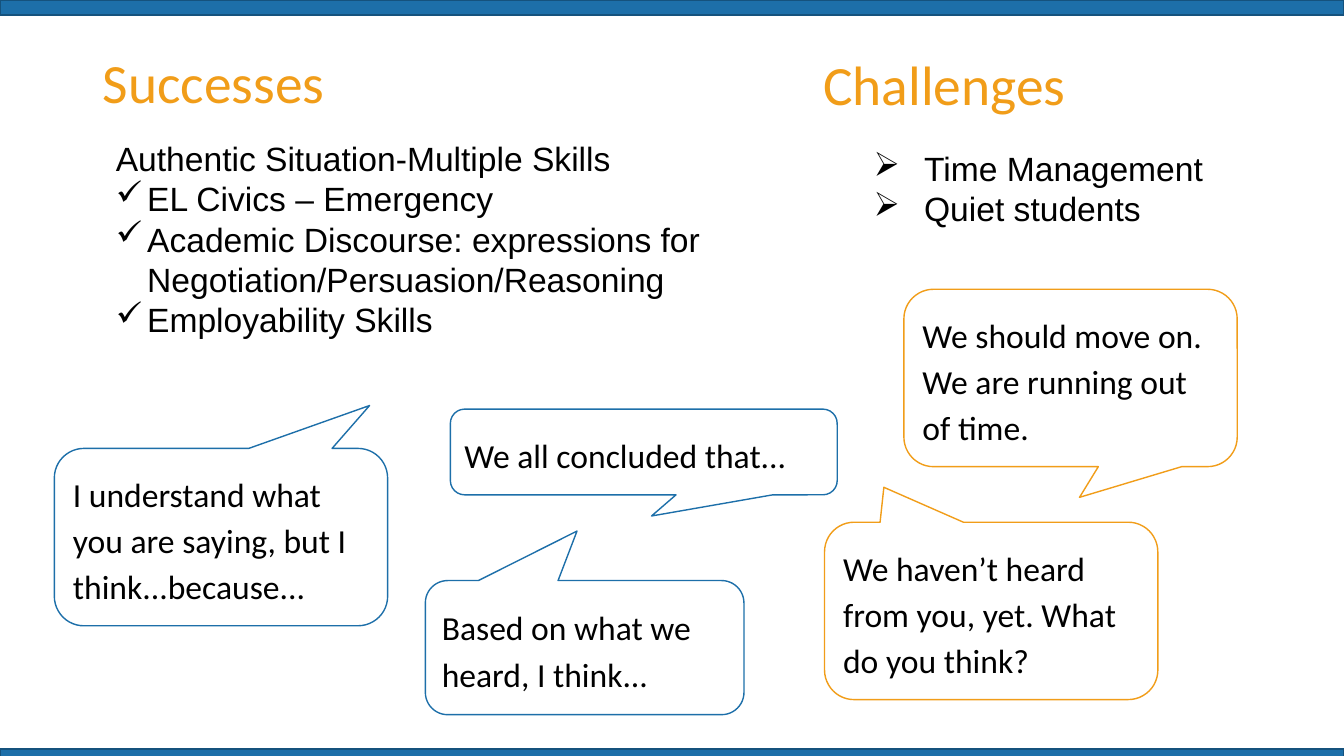
"""Build a slide that sets classroom successes beside challenges."""
from dataclasses import dataclass

import lxml.etree
import pptx
import pptx.dml.color
import pptx.enum.shapes
import pptx.enum.text
import pptx.oxml.ns
import pptx.util
from pptx.util import Cm

BLUE, DARK_BLUE, ORANGE = "1D6FA9", "15527D", "F19D19"
BLACK, WHITE = "000000", "FFFFFF"
SHAPES = pptx.enum.shapes.MSO_SHAPE
ANCHOR = pptx.enum.text.MSO_ANCHOR


@dataclass(frozen=True)
class Place:
    left: float
    top: float
    width: float
    height: float

    def lengths(self) -> tuple:
        return Cm(self.left), Cm(self.top), Cm(self.width), Cm(self.height)


@dataclass(frozen=True)
class Callout:
    text: str
    place: Place
    pointer: tuple[float, float]
    outline: str


CALLOUTS = [
    Callout("I understand what you are saying, but I think...because...",
            Place(1.37, 11.3, 8.4, 4.47), (0.446, -0.742), BLUE),
    Callout("We all concluded that...",
            Place(11.35, 10.31, 9.75, 2.16), (0.02, 0.747), BLUE),
    Callout("Based on what we heard, I think...",
            Place(10.72, 14.63, 8.03, 3.38), (-0.024, -0.869), BLUE),
    Callout("We haven’t heard from you, yet. What do you think?",
            Place(20.78, 13.16, 8.4, 4.47), (-0.322, -0.697), ORANGE),
    Callout("We should move on. We are running out of time.",
            Place(22.78, 7.29, 8.4, 4.47), (0.027, 0.673), ORANGE),
]


def color(value: str) -> pptx.dml.color.RGBColor:
    return pptx.dml.color.RGBColor.from_string(value)


def write(frame, text: str, *, font: str = "Arial", size: float = 24,
          ink: str = BLACK, bullet: str = "", plain_lines: int = 0,
          indent: float = 0, spacing: float = 1.0,
          anchor=ANCHOR.TOP, top_inset: float = 0.25) -> None:
    frame.word_wrap = True
    frame.auto_size = pptx.enum.text.MSO_AUTO_SIZE.NONE
    frame.vertical_anchor = anchor
    frame.margin_top = Cm(top_inset)
    frame.text = text
    for number, para in enumerate(frame.paragraphs):
        if bullet and number >= plain_lines:
            properties = para._p.get_or_add_pPr()
            properties.set("marL", str(Cm(indent)))
            properties.set("indent", str(-Cm(indent)))
            lxml.etree.SubElement(properties, pptx.oxml.ns.qn("a:buChar"), char=bullet)
        para.alignment = pptx.enum.text.PP_ALIGN.LEFT
        para.line_spacing = spacing
        for span in para.runs:
            span.font.name = font
            span.font.size = pptx.util.Pt(size)
            span.font.color.rgb = color(ink)


def add_panel(page, kind, place: Place, fill: str, outline: str):
    panel = page.shapes.add_shape(kind, *place.lengths())
    panel.shadow.inherit = False
    panel.fill.solid()
    panel.fill.fore_color.rgb = color(fill)
    panel.line.color.rgb = color(outline)
    panel.line.width = pptx.util.Pt(1)
    return panel


def add_text(page, place: Place, text: str, **style) -> None:
    write(page.shapes.add_textbox(*place.lengths()).text_frame, text, **style)


def add_callout(page, callout: Callout) -> None:
    panel = add_panel(page, SHAPES.ROUNDED_RECTANGULAR_CALLOUT, callout.place,
                      WHITE, callout.outline)
    panel.adjustments[0], panel.adjustments[1] = callout.pointer
    write(panel.text_frame, callout.text, font="Calibri", spacing=1.15,
          anchor=ANCHOR.MIDDLE, top_inset=0.13)


def main() -> None:
    deck = pptx.Presentation()
    deck.slide_width, deck.slide_height = Cm(33.87), Cm(19.05)
    page = deck.slides.add_slide(deck.slide_layouts[5])

    for top in (0, 18.87):
        add_panel(page, SHAPES.RECTANGLE, Place(0, top, 33.87, 0.38), BLUE, DARK_BLUE)

    heading = {"font": "Calibri", "size": 39.6, "ink": ORANGE}
    title = page.shapes.title
    title.left, title.top, title.width, title.height = Place(2.34, 1.02, 29.21, 3.68).lengths()
    write(title.text_frame, "Successes", top_inset=0.18, **heading)
    add_text(page, Place(20.5, 1.02, 9.6, 1.96), "Challenges", **heading)

    add_text(page, Place(21.77, 3.48, 9.78, 4.52),
             "Time Management\nQuiet students", bullet="➢", indent=1.27)
    for callout in CALLOUTS:
        add_callout(page, callout)
    add_text(page, Place(2.67, 3.35, 15.37, 6.15),
             "Authentic Situation-Multiple Skills\n"
             "EL Civics – Emergency\n"
             "Academic Discourse: expressions for Negotiation/Persuasion/Reasoning\n"
             "Employability Skills",
             bullet="✓", plain_lines=1, indent=0.79, top_inset=0.13)

    deck.save("out.pptx")


if __name__ == "__main__":
    main()
